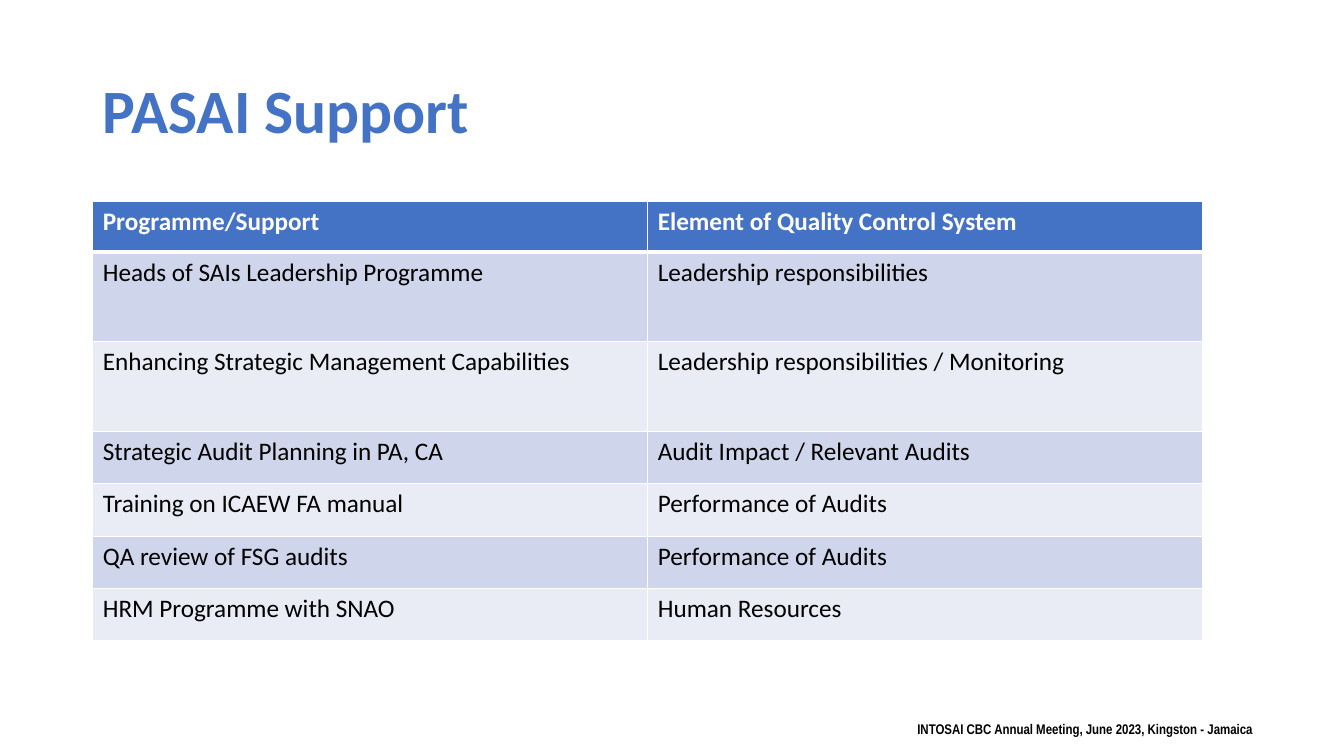
from lxml import etree
from pptx import Presentation
from pptx.dml.color import RGBColor
from pptx.enum.text import MSO_ANCHOR
from pptx.oxml.ns import qn
from pptx.util import Inches, Pt

MIDDLE = MSO_ANCHOR.MIDDLE
TOP = MSO_ANCHOR.TOP
BLUE, WHITE, BLACK = "4472C4", "FFFFFF", "000000"
BANDS = ("E9EBF5", "CFD5EA")

TITLE_FORMAT = {"name": "Calibri", "size": Pt(44), "bold": True}
HEADER_FORMAT = {"name": "Calibri", "size": Pt(18), "bold": True}
BODY_FORMAT = {"name": "Calibri", "size": Pt(18), "bold": False}
FOOTER_FORMAT = {"name": "Arial Narrow", "size": Pt(10), "bold": True}

ROW_HEIGHTS = [0.5, 0.89, 0.89, 0.52, 0.52, 0.52, 0.52]
SUPPORT_ROWS = [
    ("Programme/Support", "Element of Quality Control System"),
    ("Heads of SAIs Leadership Programme", "Leadership responsibilities"),
    ("Enhancing Strategic Management Capabilities", "Leadership responsibilities / Monitoring"),
    ("Strategic Audit Planning in PA, CA", "Audit Impact / Relevant Audits"),
    ("Training on ICAEW FA manual", "Performance of Audits"),
    ("QA review of FSG audits", "Performance of Audits"),
    ("HRM Programme with SNAO", "Human Resources"),
]


def color(hex_value):
    """Turn a hex string into a colour."""
    return RGBColor.from_string(hex_value)


def write_text(text_frame, text, font_format, hex_value):
    """Write one formatted paragraph and return it."""
    paragraph = text_frame.paragraphs[0]
    run = paragraph.add_run()
    run.text = text
    for attribute, value in font_format.items():
        setattr(run.font, attribute, value)
    run.font.color.rgb = color(hex_value)
    return paragraph


def add_text(slide, box, text, font_format, hex_value, anchor=TOP):
    """Place a wrapped text box and return its paragraph."""
    shape = slide.shapes.add_textbox(*map(Inches, box))
    shape.text_frame.word_wrap = True
    shape.text_frame.vertical_anchor = anchor
    return write_text(shape.text_frame, text, font_format, hex_value)


def add_title(slide, box):
    """Place the slide title."""
    paragraph = add_text(slide, box, "PASAI Support", TITLE_FORMAT, BLUE, MIDDLE)
    paragraph.line_spacing = 0.9


def add_borders(cell, widths):
    """Draw white cell borders with the given widths in points."""
    properties = cell._tc.get_or_add_tcPr()
    for side, width in widths.items():
        line = etree.SubElement(properties, qn(f"a:ln{side}"), w=str(Pt(width)))
        fill = etree.SubElement(line, qn("a:solidFill"))
        etree.SubElement(fill, qn("a:srgbClr"), val=WHITE)


def add_support_table(slide, box):
    """Place the banded table of programmes and quality elements."""
    row_count, column_count = len(SUPPORT_ROWS), len(SUPPORT_ROWS[0])
    table = slide.shapes.add_table(row_count, column_count, *map(Inches, box)).table
    for column in table.columns:
        column.width = Inches(box[2] / column_count)
    for index, (height, texts) in enumerate(zip(ROW_HEIGHTS, SUPPORT_ROWS)):
        table.rows[index].height = Inches(height)
        is_header = index == 0
        font_format = HEADER_FORMAT if is_header else BODY_FORMAT
        widths = {"L": 1, "R": 1, "T": 3 if index == 1 else 1, "B": 3 if is_header else 1}
        for cell, text in zip(table.rows[index].cells, texts):
            add_borders(cell, widths)
            cell.fill.solid()
            cell.fill.fore_color.rgb = color(BLUE if is_header else BANDS[index % 2])
            write_text(cell.text_frame, text, font_format, WHITE if is_header else BLACK)


def add_footer(slide, box):
    """Place the meeting line."""
    text = "INTOSAI CBC Annual Meeting, June 2023, Kingston - Jamaica"
    add_text(slide, box, text, FOOTER_FORMAT, BLACK)


def main():
    """Build and save the slide."""
    presentation = Presentation()
    presentation.slide_width = Inches(13.33)
    presentation.slide_height = Inches(7.5)
    slide = presentation.slides.add_slide(presentation.slide_layouts[6])
    add_title(slide, (0.92, 0.4, 11.5, 1.45))
    add_support_table(slide, (0.92, 2, 11.01, sum(ROW_HEIGHTS)))
    add_footer(slide, (9, 7.1, 3.56, 0.27))
    presentation.save("out.pptx")


if __name__ == "__main__":
    main()
